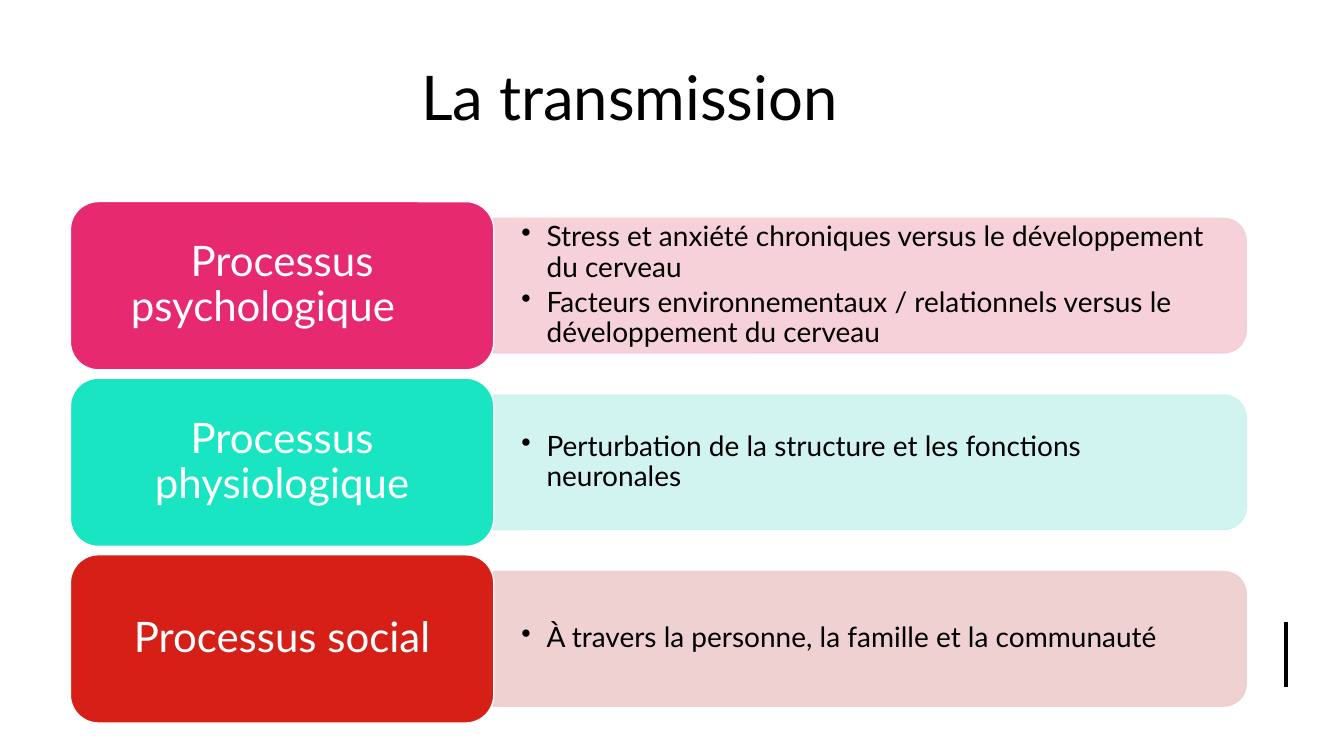
from pptx import Presentation
from pptx import util as u
from pptx.dml.color import RGBColor
from pptx.enum import shapes, text
from pptx.oxml.ns import qn
from lxml import etree

ROWS = [
    ("Processus psychologique\t", "E72970", "F6CDD5",
     ["Stress et anxiété chroniques versus le développement du cerveau",
      "Facteurs environnementaux / relationnels versus le développement du cerveau"]),
    ("Processus physiologique", "19E5C3", "CDF3EF",
     ["Perturbation de la structure et les fonctions neuronales"]),
    ("Processus social", "D51F17", "EFCDCC",
     ["À travers la personne, la famille et la communauté"]),
]
FIRST_CENTRE, ROW_PITCH = 7.2, 4.45


def colour(value):
    return RGBColor.from_string(value)


def apply(target, values):
    for name, value in values.items():
        setattr(target, name, value)


class SlideBuilder:
    font = "Lato"

    def __init__(self, page):
        self.page = page

    def fill_text(self, box, lines, size, ink, para_format, margins=(0.25, 0.13), bullet=False):
        side, edge = (u.Cm(m) for m in margins)
        frame = box.text_frame
        apply(frame, {"word_wrap": True, "vertical_anchor": text.MSO_ANCHOR.MIDDLE,
                      "margin_left": side, "margin_right": side,
                      "margin_top": edge, "margin_bottom": edge})
        for index, line in enumerate(lines):
            para = frame.add_paragraph() if index else frame.paragraphs[0]
            apply(para, para_format)
            if bullet:
                props = para._p.get_or_add_pPr()
                props.set("marL", str(u.Cm(0.635)))
                props.set("indent", str(u.Cm(-0.635)))
                etree.SubElement(props, qn("a:buChar")).set("char", "•")
            span = para.add_run()
            span.text = line
            apply(span.font, {"name": self.font, "size": u.Pt(size)})
            span.font.color.rgb = colour(ink)

    def title(self, words, left, top, width, height):
        box = self.page.shapes.title
        apply(box, {"left": u.Cm(left), "top": u.Cm(top),
                    "width": u.Cm(width), "height": u.Cm(height)})
        self.fill_text(box, [words], 44, "000000", {"alignment": text.PP_ALIGN.CENTER})

    def shape(self, kind, centre_x, centre_y, width, height, fill, line, alpha=100):
        box = self.page.shapes.add_shape(
            kind, u.Cm(centre_x - width / 2), u.Cm(centre_y - height / 2),
            u.Cm(width), u.Cm(height))
        box.shadow.inherit = False
        box.fill.solid()
        box.fill.fore_color.rgb = colour(fill)
        box.line.color.rgb = colour(line)
        box.line.width = u.Pt(1)
        if alpha < 100:
            for tint in box._element.spPr.iter(qn("a:srgbClr")):
                etree.SubElement(tint, qn("a:alpha")).set("val", str(alpha * 1000))
        return box

    def band(self, centre_y, fill):
        box = self.shape(shapes.MSO_SHAPE.ROUND_2_SAME_RECTANGLE,
                         21.92, centre_y, 3.39, 18.97, fill, fill, alpha=90)
        box.rotation = 90

    def bullets(self, centre_y, lines):
        height = 3.06
        box = self.page.shapes.add_textbox(
            u.Cm(12.45), u.Cm(centre_y - height / 2), u.Cm(18.8), u.Cm(height))
        self.fill_text(box, lines, 20, "000000",
                       {"line_spacing": 0.9, "space_after": u.Pt(3.5),
                        "alignment": text.PP_ALIGN.LEFT},
                       margins=(0.69, 0.36), bullet=True)

    def card(self, centre_y, words, fill):
        box = self.shape(shapes.MSO_SHAPE.ROUNDED_RECTANGLE,
                         7.11, centre_y, 10.67, 4.24, fill, "FFFFFF")
        self.fill_text(box, [words], 30, "FFFFFF",
                       {"line_spacing": 0.9, "alignment": text.PP_ALIGN.CENTER},
                       margins=(0.3, 0.15))

    def rule(self, x, top, bottom):
        line = self.page.shapes.add_connector(
            shapes.MSO_CONNECTOR.STRAIGHT, u.Cm(x), u.Cm(top), u.Cm(x), u.Cm(bottom))
        line.line.color.rgb = colour("000000")
        line.line.width = u.Pt(3)
        etree.SubElement(line._element.spPr, qn("a:effectLst"))


def main():
    deck = Presentation()
    apply(deck, {"slide_width": u.Cm(33.87), "slide_height": u.Cm(19.05)})
    builder = SlideBuilder(deck.slides.add_slide(deck.slide_layouts[5]))

    # Title and accent rule
    builder.title("La transmission", 2.12, 0.81, 27.5, 3.22)
    builder.rule(32.41, 15.67, 17.32)

    # One row per process: pale band, its bullets, then the card on top
    for index, (process, strong, pale, effects) in enumerate(ROWS):
        centre = FIRST_CENTRE + index * ROW_PITCH
        builder.band(centre, pale)
        builder.bullets(centre, effects)
        builder.card(centre, process, strong)

    deck.save("out.pptx")


if __name__ == "__main__":
    main()
